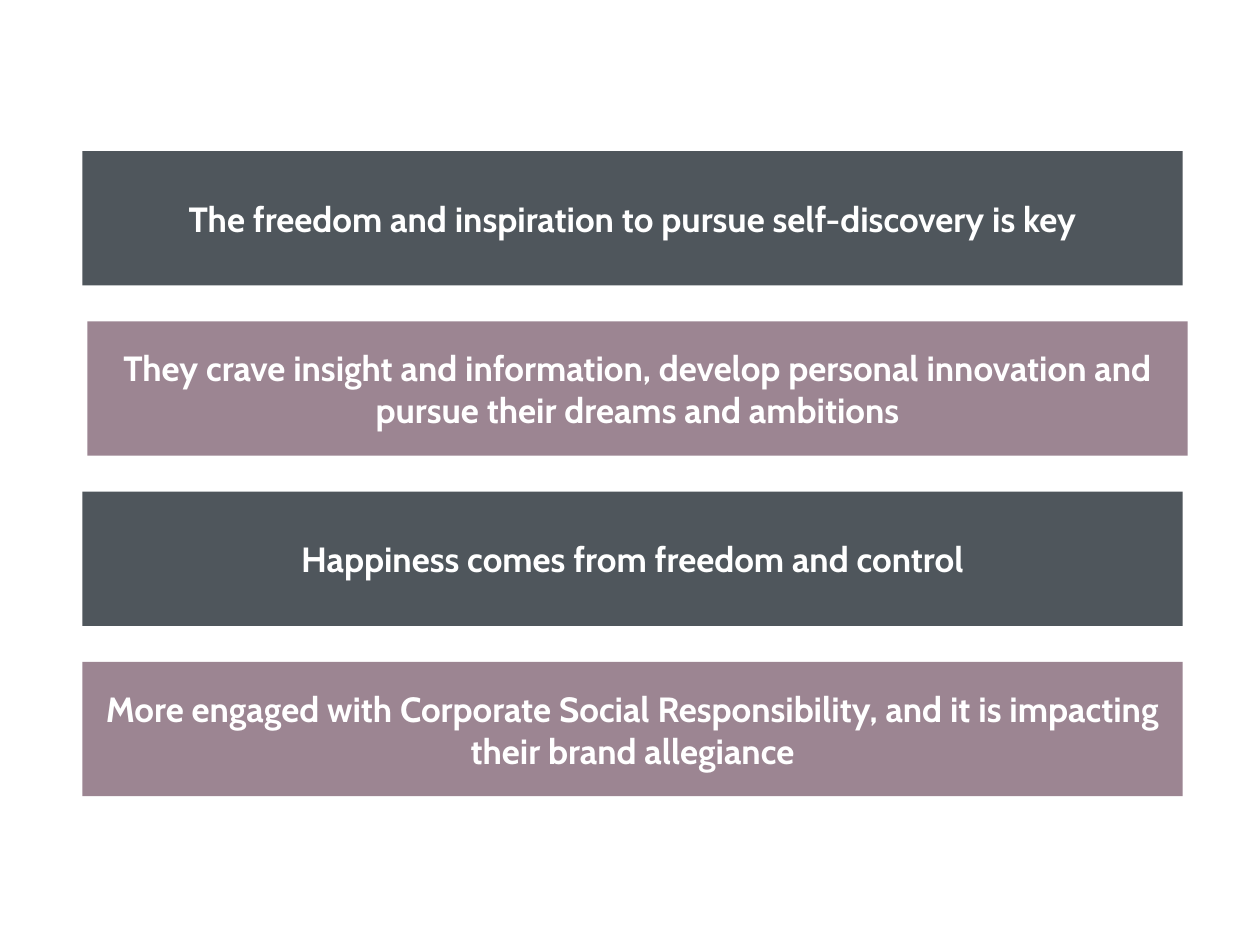
import pptx
import pptx.dml.color
import pptx.enum.shapes
import pptx.enum.text
import pptx.util
from pptx.util import Inches

SLATE = "4F565C"
MAUVE = "9C8592"
WHITE = "FFFFFF"

PAGE_WIDTH = 7.5
FIRST_TOP = 0.9
LAST_TOP = 3.94
STATEMENTS = [
    (0.49, SLATE, "The freedom and inspiration to pursue self-discovery is key"),
    (0.52, MAUVE, "They crave insight and information, develop personal innovation "
                  "and pursue their dreams and ambitions"),
    (0.49, SLATE, "Happiness comes from freedom and control"),
    (0.49, MAUVE, "More engaged with Corporate Social Responsibility, "
                  "and it is impacting their brand allegiance"),
]


def color(hex_value):
    return pptx.dml.color.RGBColor.from_string(hex_value)


def add_banner(page, left, top, fill, text):
    box = page.shapes.add_shape(
        pptx.enum.shapes.MSO_SHAPE.RECTANGLE,
        Inches(left), Inches(top), Inches(6.55), Inches(0.8))
    box.shadow.inherit = False
    box.fill.solid()
    box.fill.fore_color.rgb = color(fill)
    box.line.fill.background()

    frame = box.text_frame
    frame.word_wrap = True
    frame.vertical_anchor = pptx.enum.text.MSO_ANCHOR.MIDDLE
    frame.text = text
    para = frame.paragraphs[0]
    para.alignment = pptx.enum.text.PP_ALIGN.CENTER
    font = para.runs[0].font
    font.name = "Cabin"
    font.size = pptx.util.Pt(15)
    font.bold = True
    font.color.rgb = color(WHITE)


def main():
    deck = pptx.Presentation()
    deck.slide_width = Inches(PAGE_WIDTH)
    deck.slide_height = Inches(PAGE_WIDTH * 3 / 4)
    page = deck.slides.add_slide(deck.slide_layouts[6])
    page.background.fill.solid()
    page.background.fill.fore_color.rgb = color(WHITE)

    step = (LAST_TOP - FIRST_TOP) / (len(STATEMENTS) - 1)
    for index, (left, fill, text) in enumerate(STATEMENTS):
        add_banner(page, left, FIRST_TOP + index * step, fill, text)

    deck.save("out.pptx")


if __name__ == "__main__":
    main()
